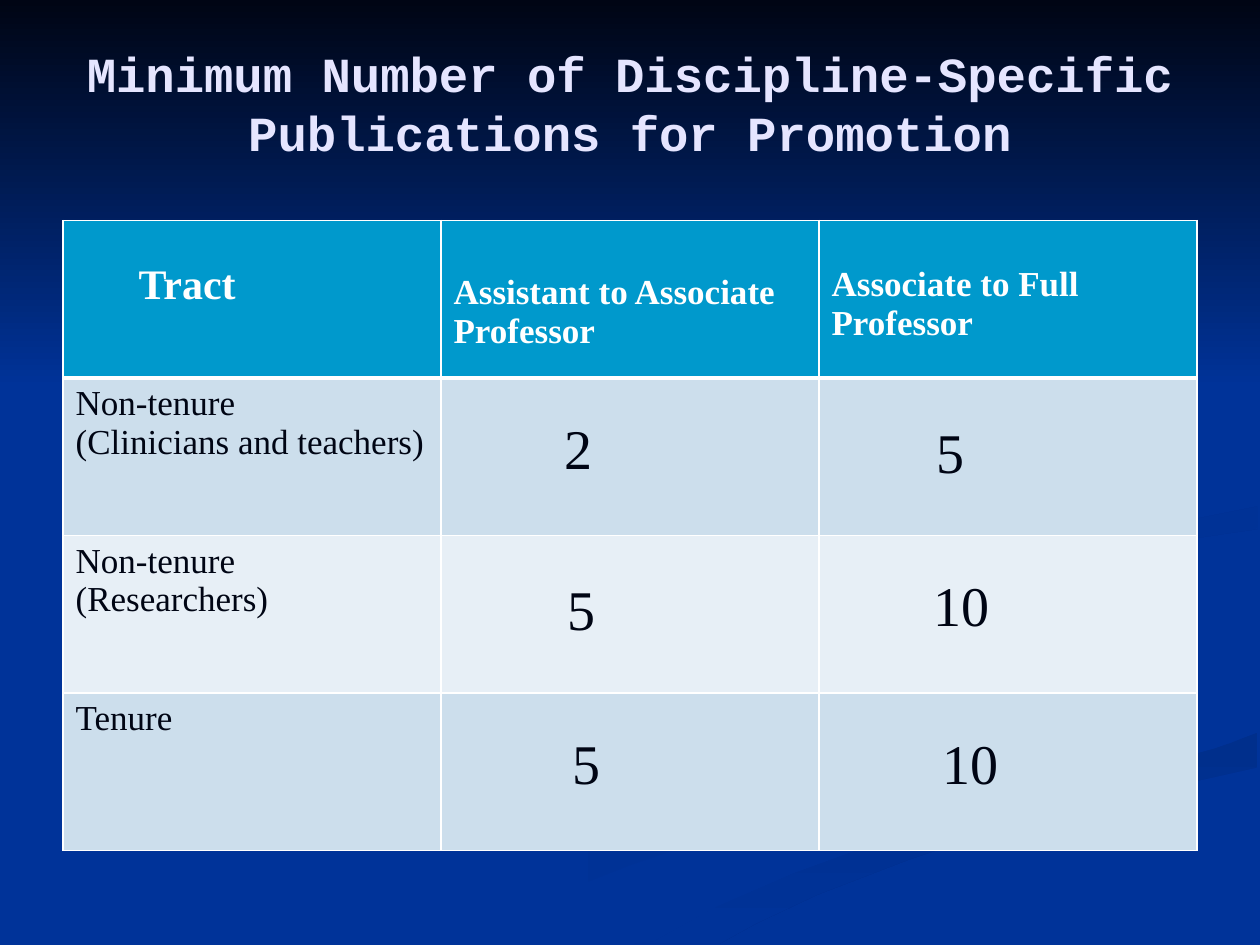
from lxml import etree
from pptx import Presentation
from pptx.dml.color import RGBColor
from pptx.enum import text
from pptx.oxml import ns
from pptx.util import Inches, Pt

BLUE = RGBColor(0x00, 0x33, 0x99)
NAVY = RGBColor(0x00, 0x05, 0x14)
FAINT = RGBColor(0x00, 0x31, 0x93)
DEEP = RGBColor(0x00, 0x2F, 0x8C)
MUTED = RGBColor(0x00, 0x30, 0x91)
LAVENDER = RGBColor(0xE5, 0xE5, 0xFF)
WHITE = RGBColor(0xFF, 0xFF, 0xFF)
HEADER = RGBColor(0x00, 0x99, 0xCC)
BANDS = (RGBColor(0xCC, 0xDE, 0xEC), RGBColor(0xE7, 0xEF, 0xF6))

SERIF = "Times New Roman"
LINE_HEIGHT = 1.107  # line pitch of the serif face, in ems

# Outline, first colour, second colour, clockwise angle
RIBBONS = [
    ([(7.81, 5.53), (7.45, 5.38), (6.82, 5.19), (6.26, 5.02), (5.94, 4.85),
      (5.76, 4.69), (5.75, 4.59), (5.7, 4.7), (5.81, 4.84), (6.11, 4.99),
      (6.79, 5.19), (7.41, 5.39), (7.76, 5.53), (7.86, 5.66), (7.74, 5.83),
      (7.39, 5.98), (6.84, 6.13), (5.79, 6.39), (4.99, 6.61), (4.17, 6.9),
      (3.38, 7.27), (3, 7.49), (3.61, 7.49), (4.31, 7.14), (4.99, 6.87),
      (5.64, 6.65), (6.51, 6.4), (7.4, 6.18), (7.8, 6.05), (7.95, 5.92),
      (8, 5.81), (7.95, 5.67)], BLUE, FAINT, 0),
    ([(5.19, 7.47), (5.03, 7.49), (5.71, 7.49), (6, 7.33), (6.49, 7.1),
      (7.22, 6.82), (7.85, 6.61), (8.61, 6.4), (9.49, 6.2), (9.98, 6.09),
      (9.98, 5.81), (9.76, 5.9), (9.36, 6.02), (8.67, 6.2), (7.97, 6.38),
      (7.64, 6.47), (6.96, 6.69), (6.3, 6.93), (5.69, 7.19)], DEEP, BLUE, 90),
    ([(7.25, 4.64), (7.34, 4.83), (7.75, 5.03), (8.31, 5.19), (8.89, 5.35),
      (9.31, 5.53), (9.43, 5.7), (9.36, 5.87), (9.11, 6), (8.69, 6.11),
      (7.8, 6.34), (7.04, 6.55), (6.19, 6.84), (5.26, 7.24), (4.77, 7.49),
      (5.03, 7.49), (5.19, 7.47), (5.7, 7.19), (6.3, 6.93), (6.96, 6.69),
      (7.97, 6.38), (9.04, 6.1), (9.64, 5.94), (9.99, 5.81), (9.99, 5.38),
      (9.41, 5.27), (8.66, 5.09), (8.17, 4.92), (7.86, 4.73), (7.82, 4.6),
      (8, 4.42), (8.5, 4.27), (9.33, 4.15), (9.99, 4.02), (9.99, 3.87),
      (9.42, 3.99), (8.51, 4.11), (7.88, 4.22), (7.42, 4.39)],
     BLUE, BLUE, 0),
    ([(7.81, 4.6), (7.86, 4.74), (8.06, 4.87), (8.26, 4.96), (8.09, 4.84),
      (8.05, 4.72), (8.16, 4.59), (8.59, 4.43), (9.36, 4.29), (9.98, 4.2),
      (9.98, 4.02), (9.33, 4.15), (8.49, 4.27), (7.99, 4.42)],
     MUTED, BLUE, 45),
    ([(0, 0), (0, 3.08), (10, 3.08), (10, 0)], NAVY, BLUE, 90),
]

# Each cell: lines, text size, size of the clear line above (points), indent (inches)
ROWS = [
    [(["Tract"], 24, 18, 0.5),
     (["Assistant to Associate Professor"], 20, 24, 0),
     (["Associate to Full", "Professor"], 20, 20, 0)],
    [(["Non-tenure", "(Clinicians and teachers)"], 20, 0, 0),
     (["2"], 32, 18, 0.88), (["5"], 32, 20, 0.83)],
    [(["Non-tenure", "(Researchers)"], 20, 0, 0),
     (["5"], 32, 20, 0.9), (["10"], 32, 18, 0.81)],
    [(["Tenure"], 20, 0, 0),
     (["5"], 32, 18, 0.94), (["10"], 32, 18, 0.88)],
]


def set_all(target, values):
    for name, value in values.items():
        setattr(target, name, value)


def add_span(para, words, size, face, color, bold):
    span = para.add_run()
    span.text = words
    set_all(span.font, {"size": Pt(size), "name": face, "bold": bold})
    span.font.color.rgb = color


def add_ribbon(page, outline, first, second, angle):
    points = [(Inches(x), Inches(y)) for x, y in outline]
    builder = page.shapes.build_freeform(*points[0])
    builder.add_line_segments(points[1:], close=True)
    ribbon = builder.convert_to_shape()
    ribbon.shadow.inherit = False
    ribbon.line.fill.background()
    if first == second:
        ribbon.fill.solid()
        ribbon.fill.fore_color.rgb = first
        return
    ribbon.fill.gradient()
    ribbon.fill.gradient_angle = -angle % 360
    for stop, color, position in zip(ribbon.fill.gradient_stops, (first, second), (0, 1)):
        stop.color.rgb = color
        stop.position = position


def add_title(page, words):
    box = page.shapes.add_textbox(Inches(0.5), Inches(0.3), Inches(9), Inches(1.03))
    set_all(box.text_frame, {"word_wrap": True,
                             "vertical_anchor": text.MSO_ANCHOR.MIDDLE})
    para = box.text_frame.paragraphs[0]
    para.alignment = text.PP_ALIGN.CENTER
    add_span(para, words, 28, "Courier New", LAVENDER, True)


def set_borders(cell, widths):
    """Draw white cell edges; widths maps an edge tag to points."""
    props = cell._tc.get_or_add_tcPr()
    for index, (edge, width) in enumerate(widths.items()):
        line = etree.Element(ns.qn(f"a:{edge}"), w=str(Pt(width)))
        fill = etree.SubElement(line, ns.qn("a:solidFill"))
        etree.SubElement(fill, ns.qn("a:srgbClr"), val=str(WHITE))
        props.insert(index, line)


def fill_cell(cell, content, row):
    lines, size, clear_line, indent = content
    header = row == 0
    set_all(cell, {"margin_left": Inches(0.1 + indent),
                   "margin_top": Inches(0.05) + Pt(clear_line * LINE_HEIGHT)})
    cell.fill.solid()
    cell.fill.fore_color.rgb = HEADER if header else BANDS[(row - 1) % 2]
    for index, words in enumerate(lines):
        frame = cell.text_frame
        para = frame.add_paragraph() if index else frame.paragraphs[0]
        add_span(para, words, size, SERIF, WHITE if header else NAVY, header)
    set_borders(cell, {"lnL": 1, "lnR": 1, "lnT": 3 if row == 1 else 1,
                       "lnB": 3 if header else 1})


def add_publication_table(page):
    frame = page.shapes.add_table(len(ROWS), len(ROWS[0]), Inches(0.5),
                                  Inches(1.75), Inches(9), Inches(5))
    for row, contents in enumerate(ROWS):
        for column, content in enumerate(contents):
            fill_cell(frame.table.cell(row, column), content, row)


def main():
    deck = Presentation()
    set_all(deck, {"slide_width": Inches(10), "slide_height": Inches(7.5)})
    page = deck.slides.add_slide(deck.slide_layouts[6])
    page.background.fill.solid()
    page.background.fill.fore_color.rgb = BLUE
    for ribbon in RIBBONS:
        add_ribbon(page, *ribbon)
    add_title(page, "Minimum Number of Discipline-Specific Publications for Promotion")
    add_publication_table(page)
    deck.save("out.pptx")


if __name__ == "__main__":
    main()
